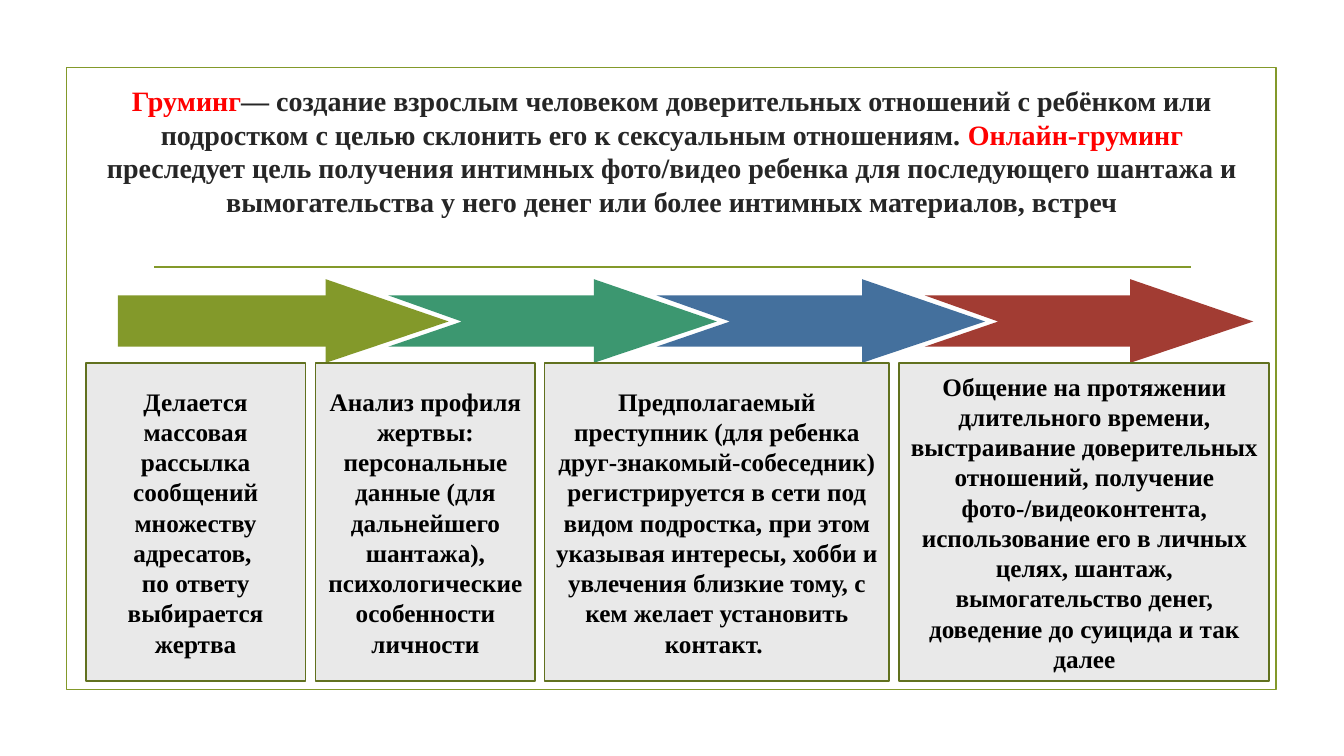
from pptx import Presentation
from pptx import util as u
from pptx.dml.color import RGBColor
from pptx.enum import shapes, text
from pptx.oxml.ns import qn
from lxml import etree

TITLE = [
    ("Груминг", "accent"),
    ("— создание взрослым человеком доверительных отношений с ребёнком или подростком "
     "с целью склонить его к сексуальным отношениям. ", "title"),
    ("Онлайн-груминг", "accent"),
    (" преследует цель получения интимных фото/видео ребенка для последующего шантажа "
     "и вымогательства у него денег или более интимных материалов, встреч", "title"),
]
# Each stage: left, width, paragraphs
STAGES = [
    (0.85, 2.18, ["Делается массовая рассылка сообщений множеству адресатов, \n"
                  "по ответу выбирается жертва"]),
    (3.13, 2.18, ["Анализ профиля жертвы:",
                  "персональные данные (для дальнейшего шантажа), "
                  "психологические особенности личности"]),
    (5.4, 3.42, ["Предполагаемый преступник (для ребенка друг-знакомый-собеседник) "
                 "регистрируется в сети под видом подростка, при этом указывая интересы, "
                 "хобби и увлечения близкие тому, с кем желает установить контакт. "]),
    (8.92, 3.67, ["Общение на протяжении длительного времени, выстраивание доверительных "
                  "отношений, получение фото-/видеоконтента, использование его в личных "
                  "целях, шантаж, вымогательство денег, доведение до суицида и так далее"]),
]
THEME = {
    "font": "Times New Roman", "title_size": 20, "stage_size": 18, "line_width": 1.25,
    "accent": "FF0000", "title": "262626", "stage_text": "000000",
    "frame": "83992A", "stage_fill": "E9E9E9", "stage_line": "61711F",
    "arrows": ["83992A", "3C9770", "44709D", "A23C33"],
}
SLIDE_WIDTH, SLIDE_HEIGHT = 13.33, 7.5
STAGE_TOP, STAGE_HEIGHT = 3.6, 3.16
ARROW_STEP, HEAD_LEFT, HEAD_LENGTH = 2.66, 3.23, 1.22
HEAD_TOP, HEAD_BOTTOM, AXIS = 2.77, 3.6, 3.19
BODY_TOP, BODY_BOTTOM = 2.93, 3.44
BODY_LENGTH, BODY_OVERLAP, NOTCH = 2.21, 0.17, 0.73
FIRST_BODY_LEFT = 1.17


def color(value):
    return RGBColor.from_string(value)


def style(shape, fill=None, line=None):
    shape.shadow.inherit = False
    if fill:
        shape.fill.solid()
        shape.fill.fore_color.rgb = color(fill)
    else:
        shape.fill.background()
    if line:
        shape.line.color.rgb = color(line)
        shape.line.width = u.Pt(THEME["line_width"])
    else:
        shape.line.fill.background()


def add_rectangle(slide, left, top, width, height, **look):
    shape = slide.shapes.add_shape(shapes.MSO_SHAPE.RECTANGLE,
                                   *map(u.Inches, (left, top, width, height)))
    style(shape, **look)
    return shape


def add_outline(slide, points, fill):
    corners = [(u.Inches(x), u.Inches(y)) for x, y in points]
    builder = slide.shapes.build_freeform(*corners[0])
    builder.add_line_segments(corners[1:], close=True)
    style(builder.convert_to_shape(), fill=fill)


def format_paragraph(paragraph, size):
    paragraph.alignment = text.PP_ALIGN.CENTER
    paragraph.font.name = THEME["font"]
    paragraph.font.size = u.Pt(size)
    paragraph.font.bold = True


def add_frame(slide):
    add_rectangle(slide, 0.66, 0.67, 12, 6.17, line=THEME["frame"])
    rule = slide.shapes.add_connector(
        shapes.MSO_CONNECTOR.STRAIGHT, *map(u.Inches, (1.53, 2.65, 11.81, 2.65)))
    rule.line.color.rgb = color(THEME["frame"])
    rule.line.width = u.Pt(THEME["line_width"])
    etree.SubElement(rule.element.spPr, qn("a:effectLst"))


def fill_title(slide):
    title = slide.shapes.title
    title.left, title.top, title.width, title.height = map(u.Inches, (0.78, 0.78, 11.77, 1.43))
    frame = title.text_frame
    frame.word_wrap = True
    frame.auto_size = text.MSO_AUTO_SIZE.NONE
    frame.vertical_anchor = text.MSO_ANCHOR.MIDDLE
    paragraph = frame.paragraphs[0]
    format_paragraph(paragraph, THEME["title_size"])
    for words, role in TITLE:
        run = paragraph.add_run()
        run.text = words
        run.font.color.rgb = color(THEME[role])


def add_arrow(slide, index, fill):
    head = HEAD_LEFT + index * ARROW_STEP
    body_right = head + BODY_OVERLAP
    body_left = body_right - BODY_LENGTH
    if index:
        add_outline(slide, [(body_left, BODY_TOP), (body_left + NOTCH, AXIS),
                            (body_left, BODY_BOTTOM), (body_right, BODY_BOTTOM),
                            (body_right, BODY_TOP)], fill)
    else:
        add_rectangle(slide, FIRST_BODY_LEFT, BODY_TOP, body_right - FIRST_BODY_LEFT,
                      BODY_BOTTOM - BODY_TOP, fill=fill)
    add_outline(slide, [(head + HEAD_LENGTH, AXIS), (head, HEAD_BOTTOM), (head, HEAD_TOP)], fill)


def add_stage(slide, left, width, paragraphs):
    box = add_rectangle(slide, left, STAGE_TOP, width, STAGE_HEIGHT,
                        fill=THEME["stage_fill"], line=THEME["stage_line"])
    frame = box.text_frame
    frame.word_wrap = True
    frame.vertical_anchor = text.MSO_ANCHOR.MIDDLE
    for index, words in enumerate(paragraphs):
        paragraph = frame.add_paragraph() if index else frame.paragraphs[0]
        paragraph.text = words
        format_paragraph(paragraph, THEME["stage_size"])
        paragraph.font.color.rgb = color(THEME["stage_text"])


def main():
    presentation = Presentation()
    presentation.slide_width = u.Inches(SLIDE_WIDTH)
    presentation.slide_height = u.Inches(SLIDE_HEIGHT)
    slide = presentation.slides.add_slide(presentation.slide_layouts[5])
    add_frame(slide)
    fill_title(slide)
    for index, fill in enumerate(THEME["arrows"]):
        add_arrow(slide, index, fill)
    for stage in STAGES:
        add_stage(slide, *stage)
    presentation.save("out.pptx")


if __name__ == "__main__":
    main()
